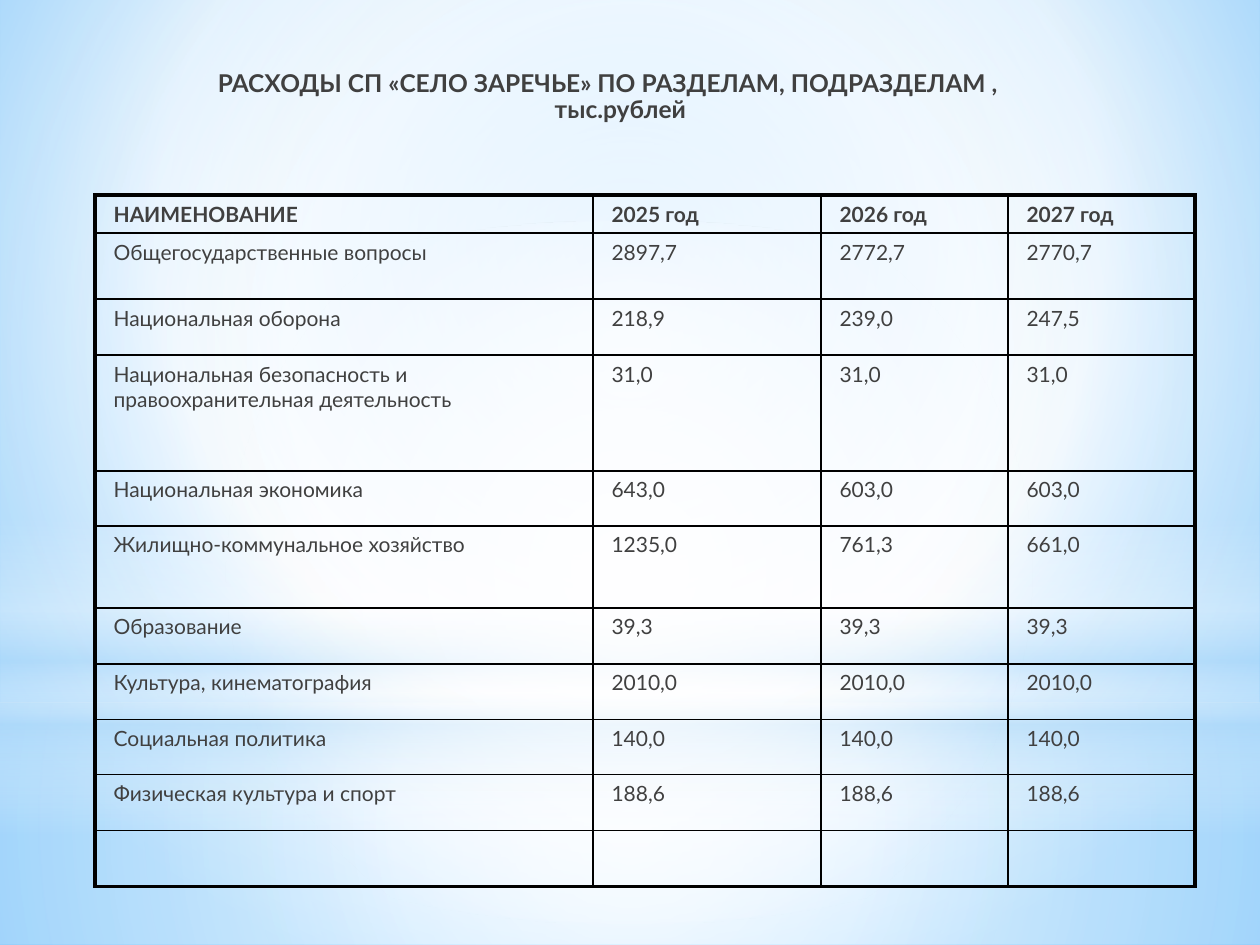
from lxml import etree
from pptx import Presentation
from pptx.dml.color import RGBColor
from pptx.enum.shapes import MSO_SHAPE
from pptx.enum.text import MSO_ANCHOR, PP_ALIGN
from pptx.oxml.ns import qn
from pptx.util import Pt

RECT, OVAL = MSO_SHAPE.RECTANGLE, MSO_SHAPE.OVAL
LEFT, MID = PP_ALIGN.LEFT, PP_ALIGN.CENTER
TOP = MSO_ANCHOR.TOP
SCALE = 914400 // 126
FONT, INK, EDGE = "Lato", "404040", "000000"
THIN, THICK = 1, 2.25
CENTER = (50, 50, 50, 50)

TITLE = "РАСХОДЫ СП «СЕЛО ЗАРЕЧЬЕ» ПО РАЗДЕЛАМ, ПОДРАЗДЕЛАМ , тыс.рублей"
COLS = (498, 228, 187, 187)
# Row height, then the cell texts
ROWS = [
    (38, "НАИМЕНОВАНИЕ", "2025 год", "2026 год", "2027 год"),
    (66, "Общегосударственные вопросы", "2897,7", "2772,7", "2770,7"),
    (56, "Национальная оборона", "218,9", "239,0", "247,5"),
    (116, "Национальная безопасность и правоохранительная деятельность",
     "31,0", "31,0", "31,0"),
    (55, "Национальная экономика", "643,0", "603,0", "603,0"),
    (82, "Жилищно-коммунальное хозяйство", "1235,0", "761,3", "661,0"),
    (56, "Образование", "39,3", "39,3", "39,3"),
    (56, "Культура, кинематография", "2010,0", "2010,0", "2010,0"),
    (55, "Социальная политика", "140,0", "140,0", "140,0"),
    (56, "Физическая культура и спорт", "188,6", "188,6", "188,6"),
    (56, "", "", "", ""),
]

# Backdrop layers: preset, box, stops (place, colour, opacity), focus
LAYERS = [
    (RECT, (0, 703, 1260, 242),
     [(0, "FFFFFF", 91), (37, "FFFFFF", 76), (100, "B4DCFA", 79)], CENTER),
    (RECT, (0, 0, 1260, 703),
     [(0, "FFFFFF", 89), (48, "FFFFFF", 62), (100, "B4DCFA", 79)], CENTER),
    (RECT, (0, 519, 1260, 315),
     [(0, "FFFFFF", 0), (29, "FFFFFF", 30), (45, "B4DCFA", 40),
      (55, "FFFFFF", 26), (65, "B4DCFA", 60), (100, "FFFFFF", 0)], None),
    (OVAL, (0, 221, 1260, 703),
     [(0, "FFFFFF", 100), (56, "FFFFFF", 0)], CENTER),
]


def px(num):
    return num * SCALE


def color(code):
    return RGBColor.from_string(code)


def node(root, tag, **attrs):
    item = etree.SubElement(root, qn(tag))
    for key, val in attrs.items():
        item.set(key, str(val))
    return item


def blend(fill, root, stops, focus):
    """Fill with a round gradient, or a downward one without a focus."""
    fill.gradient()
    grad = root.find(".//" + qn("a:gradFill"))
    for kid in list(grad):
        grad.remove(kid)
    chain = node(grad, "a:gsLst")
    for pos, code, alpha in stops:
        stop = node(chain, "a:gs", pos=pos * 1000)
        tone = node(stop, "a:srgbClr", val=code)
        if alpha < 100:
            node(tone, "a:alpha", val=alpha * 1000)
    if focus:
        ring = node(grad, "a:path", path="circle")
        sides = {side: num * 1000 for side, num in zip("ltrb", focus)}
        node(ring, "a:fillToRect", **sides)
    else:
        node(grad, "a:lin", ang=90 * 60000, scaled=0)


def write(frame, text, size=12, bold=False, align=LEFT, left=6, hang=0,
          line=None):
    frame.word_wrap = True
    para = frame.paragraphs[0]
    para.alignment = align
    para.line_spacing = line
    props = para._p.get_or_add_pPr()
    props.set("marL", str(px(left)))
    props.set("indent", str(px(hang)))
    run = para.add_run()
    run.text = text
    font = run.font
    font.name, font.size, font.bold = FONT, Pt(size), bold
    font.color.rgb = color(INK)


def layer(slide, preset, box, stops, focus):
    shape = slide.shapes.add_shape(preset, *map(px, box))
    shape.shadow.inherit = False
    shape.line.fill.background()
    blend(shape.fill, shape._element.spPr, stops, focus)


def title(slide):
    box = slide.shapes.add_textbox(px(164), px(65), px(882), px(110))
    box.text_frame.vertical_anchor = TOP
    write(box.text_frame, TITLE, size=14, bold=True, align=MID,
          left=31, hang=-25, line=0.9)


def border(cell, widths):
    props = cell._tc.get_or_add_tcPr()
    for side, width in zip("LRTB", widths):
        line = node(props, "a:ln" + side, w=Pt(width))
        node(node(line, "a:solidFill"), "a:srgbClr", val=EDGE)


def grid(slide):
    high = sum(row[0] for row in ROWS)
    table = slide.shapes.add_table(len(ROWS), len(COLS), px(95), px(195),
                                   px(sum(COLS)), px(high)).table
    table.first_row = table.horz_banding = False
    for col, wide in zip(table.columns, COLS):
        col.width = px(wide)
    for r, (tall, *texts) in enumerate(ROWS):
        table.rows[r].height = px(tall)
        for c, text in enumerate(texts):
            cell = table.cell(r, c)
            # The outer frame is thick, the inner lines are thin
            outer = (c == 0, c == len(COLS) - 1, r == 0, r == len(ROWS) - 1)
            border(cell, [THICK if edge else THIN for edge in outer])
            cell.fill.background()
            if text:
                write(cell.text_frame, text, bold=r == 0)


def main():
    deck = Presentation()
    deck.slide_width, deck.slide_height = px(1260), px(945)
    slide = deck.slides.add_slide(deck.slide_layouts[6])
    # Backdrop
    blend(slide.background.fill, slide._element,
          [(0, "9ED5FF", 100), (60, "FFFFFF", 100), (100, "5BB9FF", 100)],
          (20, 10, 20, 60))
    for item in LAYERS:
        layer(slide, *item)
    # Content
    title(slide)
    grid(slide)
    deck.save("out.pptx")


if __name__ == "__main__":
    main()
